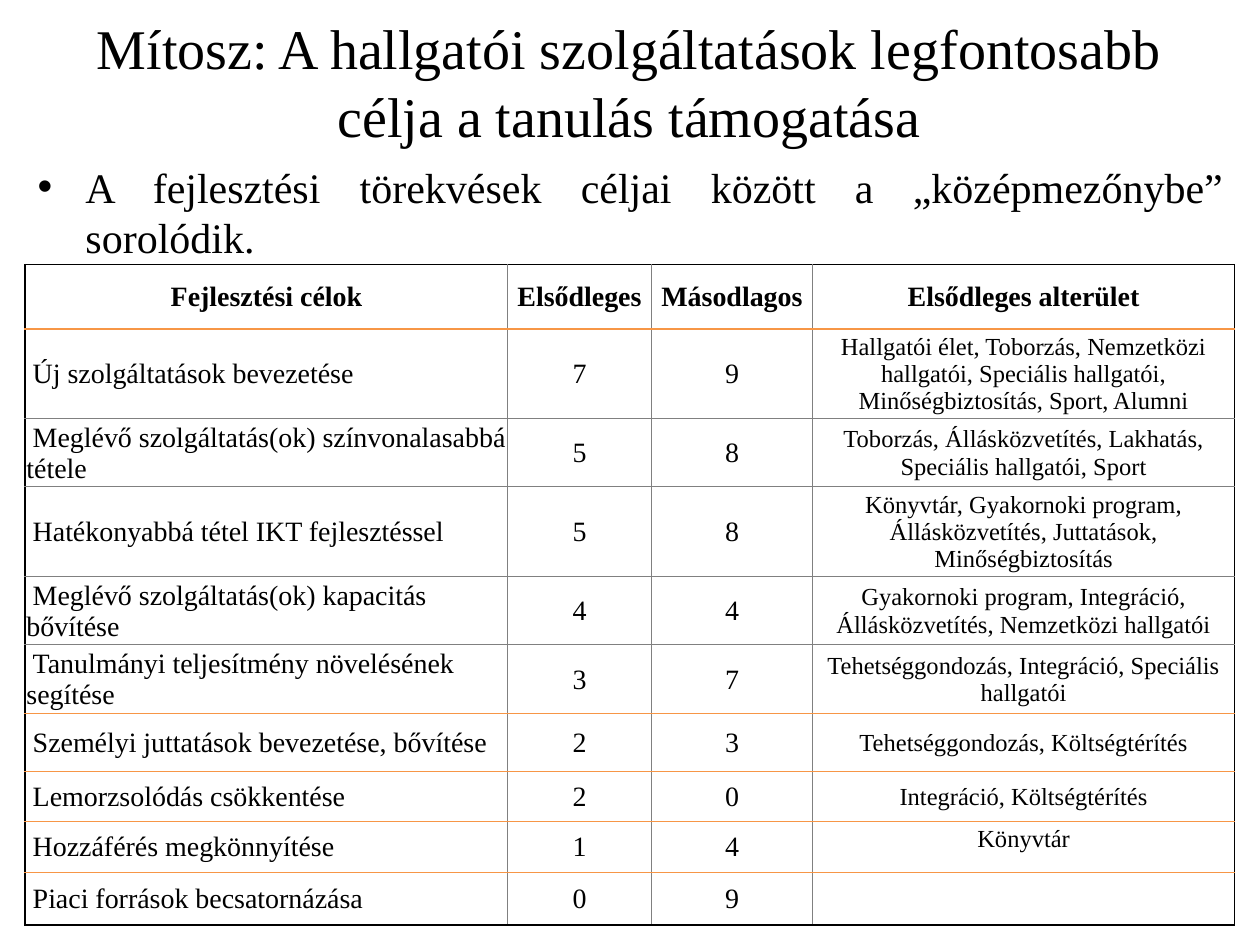
from lxml import etree
from pptx import Presentation
from pptx import util as u
from pptx.dml.color import RGBColor
from pptx.enum import text as t
from pptx.oxml.ns import qn

THEME = {
    "font": "Times New Roman",
    "ink": "000000", "rule": "F79646", "grid": "808080",
    "title": 32, "body": 24, "cell": 16, "areas": 14,
}

TITLE = "Mítosz: A hallgatói szolgáltatások legfontosabb célja a tanulás támogatása"
CLAIM = "A fejlesztési törekvések céljai között a „középmezőnybe” sorolódik."
HEADER = ("Fejlesztési célok", "Elsődleges", "Másodlagos", "Elsődleges alterület")
GOALS = [
    ("Új szolgáltatások bevezetése", 7, 9,
     "Hallgatói élet, Toborzás, Nemzetközi hallgatói, Speciális hallgatói, "
     "Minőségbiztosítás, Sport, Alumni"),
    ("Meglévő szolgáltatás(ok) színvonalasabbá tétele", 5, 8,
     "Toborzás, Állásközvetítés, Lakhatás, Speciális hallgatói, Sport"),
    ("Hatékonyabbá tétel IKT fejlesztéssel", 5, 8,
     "Könyvtár, Gyakornoki program, Állásközvetítés, Juttatások, Minőségbiztosítás"),
    ("Meglévő szolgáltatás(ok) kapacitás bővítése", 4, 4,
     "Gyakornoki program, Integráció, Állásközvetítés, Nemzetközi hallgatói"),
    ("Tanulmányi teljesítmény növelésének segítése", 3, 7,
     "Tehetséggondozás, Integráció, Speciális hallgatói"),
    ("Személyi juttatások bevezetése, bővítése", 2, 3, "Tehetséggondozás, Költségtérítés"),
    ("Lemorzsolódás csökkentése", 2, 0, "Integráció, Költségtérítés"),
    ("Hozzáférés megkönnyítése", 1, 4, "Könyvtár"),
    ("Piaci források becsatornázása", 0, 9, ""),
]
COLUMN_WIDTHS = (3.83, 1.14, 1.28, 3.35)
ROW_HEIGHTS = (0.51, 0.65, 0.51, 0.65, 0.51, 0.5, 0.46, 0.4, 0.4, 0.42)
LAST_ROW, LAST_COLUMN = len(GOALS), len(HEADER) - 1
LIBRARY_ROW = 8
GREY_RULES = range(2, 6)  # rows whose upper rule is grey

MIDDLE = t.MSO_ANCHOR.MIDDLE
CENTER = t.PP_ALIGN.CENTER
CELL_FORMAT = {
    "margin_left": u.Inches(0.01), "margin_right": u.Inches(0.01),
    "margin_top": u.Inches(0.01), "margin_bottom": 0, "vertical_anchor": MIDDLE,
}
LIBRARY_FORMAT = {
    "margin_left": u.Inches(0.1), "margin_right": u.Inches(0.1),
    "margin_top": 0, "vertical_anchor": t.MSO_ANCHOR.TOP,
}


def apply(target, formats):
    for name, value in formats.items():
        setattr(target, name, value)


def write(paragraph, words, size, align, bold=False):
    paragraph.alignment = align
    run = paragraph.add_run()
    run.text = words
    apply(run.font, {"name": THEME["font"], "size": u.Pt(size), "bold": bold})
    run.font.color.rgb = RGBColor.from_string(THEME["ink"])


def add_text(slide, box, words, size, align, anchor):
    frame = slide.shapes.add_textbox(*map(u.Inches, box)).text_frame
    apply(frame, {"word_wrap": True, "vertical_anchor": anchor})
    write(frame.paragraphs[0], words, size, align)
    return frame.paragraphs[0]


def add_bullet(paragraph):
    properties = paragraph._p.get_or_add_pPr()
    properties.set("marL", str(u.Inches(0.38)))
    properties.set("indent", str(u.Inches(-0.38)))
    etree.SubElement(properties, qn("a:buFont")).set("typeface", "Arial")
    etree.SubElement(properties, qn("a:buChar")).set("char", "•")


def rule_above(row):
    """Colour and width of the horizontal rule over a row."""
    if row in (0, LAST_ROW + 1):
        return THEME["ink"], 1
    if row == 1:
        return THEME["rule"], 1.5
    return THEME["grid" if row in GREY_RULES else "rule"], 0.5


def rule_before(column):
    """Colour and width of the vertical rule left of a column."""
    outer = column in (0, LAST_COLUMN + 1)
    return (THEME["ink"], 1) if outer else (THEME["grid"], 0.5)


def draw_borders(cell, row, column):
    sides = {"a:lnL": rule_before(column), "a:lnR": rule_before(column + 1),
             "a:lnT": rule_above(row), "a:lnB": rule_above(row + 1)}
    properties = cell._tc.get_or_add_tcPr()
    for position, (tag, (color, width)) in enumerate(sides.items()):
        line = etree.Element(qn(tag), w=str(u.Pt(width)))
        fill = etree.SubElement(line, qn("a:solidFill"))
        etree.SubElement(fill, qn("a:srgbClr")).set("val", color)
        properties.insert(position, line)


def fill_cell(cell, row, column, value):
    apply(cell, CELL_FORMAT)
    cell.fill.background()
    draw_borders(cell, row, column)
    paragraph = cell.text_frame.paragraphs[0]
    is_goal = row > 0 and column == 0
    is_areas = row > 0 and column == LAST_COLUMN
    if value != "":
        write(paragraph, str(value), THEME["areas" if is_areas else "cell"],
              t.PP_ALIGN.LEFT if is_goal else CENTER, bold=row == 0)
    if is_goal:
        paragraph._p.get_or_add_pPr().set("indent", str(u.Inches(0.05)))
    if is_areas and row == LIBRARY_ROW:
        apply(cell, LIBRARY_FORMAT)
        apply(paragraph, {"line_spacing": 1.15, "space_after": u.Pt(10)})


def add_goals_table(slide):
    table = slide.shapes.add_table(
        len(ROW_HEIGHTS), len(COLUMN_WIDTHS), u.Inches(0.2), u.Inches(2.1),
        u.Inches(sum(COLUMN_WIDTHS)), u.Inches(sum(ROW_HEIGHTS))).table
    apply(table, {"first_row": False, "horz_banding": False})
    for column, width in zip(table.columns, COLUMN_WIDTHS):
        column.width = u.Inches(width)
    for row, height in zip(table.rows, ROW_HEIGHTS):
        row.height = u.Inches(height)
    for row, values in enumerate([HEADER, *GOALS]):
        for column, value in enumerate(values):
            fill_cell(table.cell(row, column), row, column, value)


def main():
    deck = Presentation()
    apply(deck, {"slide_width": u.Inches(10), "slide_height": u.Inches(7.5)})
    slide = deck.slides.add_slide(deck.slide_layouts[6])
    add_text(slide, (0.27, 0.21, 9.45, 0.87), TITLE, THEME["title"], CENTER, MIDDLE)
    claim = add_text(slide, (0.2, 1.23, 9.61, 0.71), CLAIM, THEME["body"],
                     t.PP_ALIGN.JUSTIFY, t.MSO_ANCHOR.TOP)
    claim.space_before = u.Pt(4.8)
    add_bullet(claim)
    add_goals_table(slide)
    deck.save("out.pptx")


if __name__ == "__main__":
    main()
